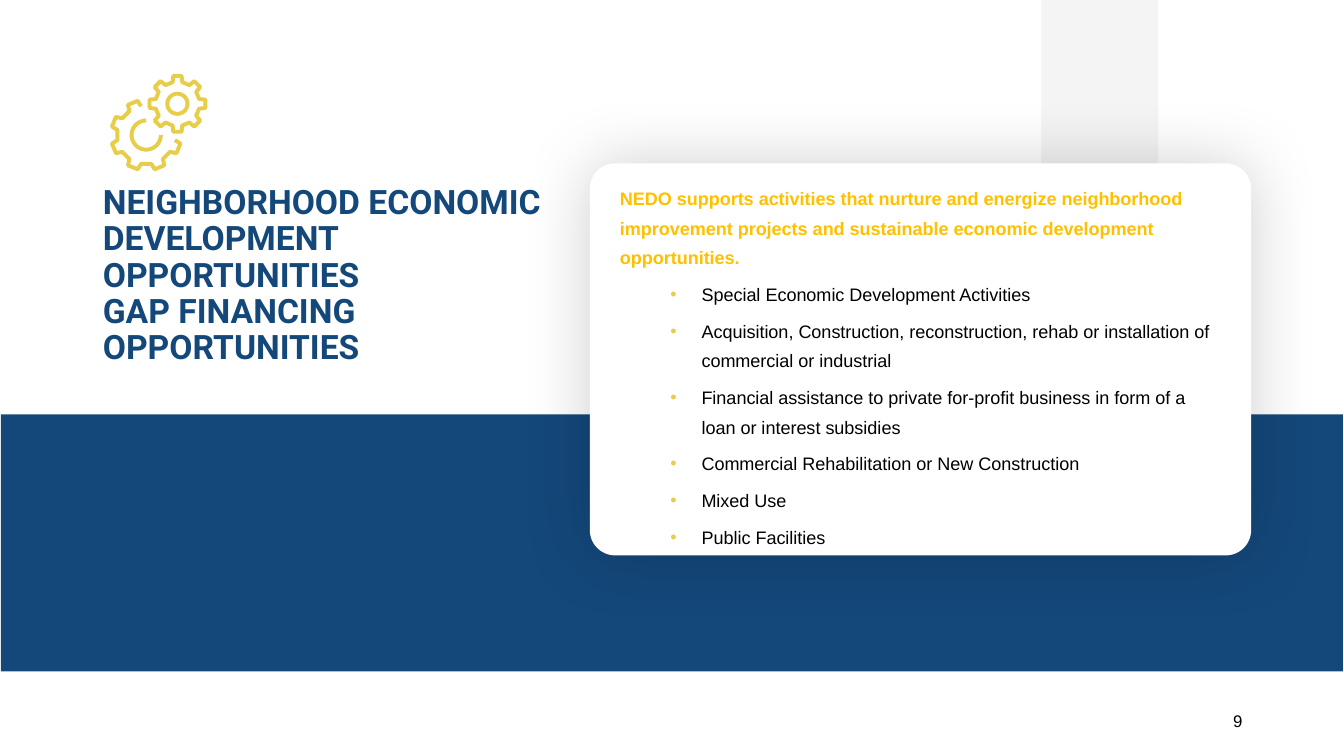
from dataclasses import dataclass
from math import cos, radians, sin

from lxml import etree
from pptx import Presentation
from pptx.dml.color import RGBColor
from pptx.enum.shapes import MSO_SHAPE
from pptx.enum.text import MSO_ANCHOR, PP_ALIGN
from pptx.oxml.ns import qn
from pptx.util import Inches, Pt

COLORS = {
    "navy": "14487A",
    "gold": "E8CD48",
    "amber": "FFC000",
    "black": "000000",
    "white": "FFFFFF",
    "gray": "F2F2F2",
}

TITLE = "NEIGHBORHOOD ECONOMIC DEVELOPMENT OPPORTUNITIES\vGAP FINANCING OPPORTUNITIES"
MISSION = (
    "NEDO supports activities that nurture and energize neighborhood improvement "
    "projects and sustainable economic development opportunities."
)
ACTIVITIES = [
    "Special Economic Development Activities",
    "Acquisition, Construction, reconstruction, rehab or installation of commercial or industrial",
    "Financial assistance to private for-profit business in form of a loan or interest subsidies",
    "Commercial Rehabilitation or New Construction",
    "Mixed Use",
    "Public Facilities",
]


@dataclass(frozen=True)
class Box:
    left: float
    top: float
    width: float
    height: float

    def lengths(self) -> list:
        return [Inches(n) for n in (self.left, self.top, self.width, self.height)]


@dataclass(frozen=True)
class Panel:
    box: Box
    color: str
    preset: MSO_SHAPE = MSO_SHAPE.RECTANGLE


@dataclass(frozen=True)
class Gear:
    """Teeth stand every 45 degrees; an open gear leaves out its last teeth."""
    x: float
    y: float
    tip: float
    root: float
    hub: float
    first_tooth: float
    teeth: int
    hub_sweep: int


STRIPE = Panel(Box(10.33, 0, 1.16, 2.02), "gray")
BAND = Panel(Box(0.01, 4.11, 13.31, 2.55), "navy")
CARD = Panel(Box(5.85, 1.62, 6.56, 3.89), "white", MSO_SHAPE.ROUNDED_RECTANGLE)
GEARS = [
    Gear(1.76, 1.03, 0.28, 0.22, 0.1, 0, 8, 360),
    Gear(1.45, 1.34, 0.35, 0.29, 0.145, 22.5, 6, 270),
]


def rgb(name: str) -> RGBColor:
    return RGBColor.from_string(COLORS[name])


def draw_panel(slide, panel: Panel):
    shape = slide.shapes.add_shape(panel.preset, *panel.box.lengths())
    shape.shadow.inherit = False
    shape.fill.solid()
    shape.fill.fore_color.rgb = rgb(panel.color)
    shape.line.fill.background()
    return shape


def add_alpha(color_element, percent: int) -> None:
    etree.SubElement(color_element, qn("a:alpha"), val=str(percent * 1000))


def add_glow_shadow(shape, blur: int, percent: int) -> None:
    effects = shape.element.spPr.find(qn("a:effectLst"))
    shadow = etree.SubElement(
        effects, qn("a:outerShdw"), blurRad=str(Pt(blur)), dist="0", dir="0",
        algn="ctr", rotWithShape="0",
    )
    add_alpha(etree.SubElement(shadow, qn("a:srgbClr"), val=COLORS["black"]), percent)


def trace(slide, gear: Gear, polar: list[tuple[float, float]], close: bool) -> None:
    """Stroke a line through (radius, degrees) points around the gear's centre."""
    points = [
        (Inches(gear.x + r * cos(radians(a))), Inches(gear.y + r * sin(radians(a))))
        for r, a in polar
    ]
    builder = slide.shapes.build_freeform(*points[0])
    builder.add_line_segments(points[1:], close=close)
    outline = builder.convert_to_shape()
    outline.shadow.inherit = False
    outline.fill.background()
    outline.line.color.rgb = rgb("gold")
    outline.line.width = Pt(2.8)
    etree.SubElement(outline.line._get_or_add_ln(), qn("a:round"))


def draw_gear(slide, gear: Gear) -> None:
    tooth = [(gear.root, -12.5), (gear.tip, -8.5), (gear.tip, 8.5), (gear.root, 12.5)]
    rim = [
        (radius, gear.first_tooth + 45 * i + offset)
        for i in range(gear.teeth)
        for radius, offset in tooth
    ]
    trace(slide, gear, rim, close=gear.teeth == 8)
    hub = [(gear.hub, -a) for a in range(0, gear.hub_sweep + 1, 10)]
    if gear.hub_sweep < 360:
        hub = [(radius, -90 + angle) for radius, angle in hub]
    trace(slide, gear, hub, close=gear.hub_sweep == 360)


def style(paragraph, font: str, size: float, color: str, bold: bool = False) -> None:
    paragraph.font.name = font
    paragraph.font.size = Pt(size)
    paragraph.font.bold = bold
    paragraph.font.color.rgb = rgb(color)


def add_text_frame(slide, box: Box, anchor: MSO_ANCHOR):
    frame = slide.shapes.add_textbox(*box.lengths()).text_frame
    frame.word_wrap = True
    frame.vertical_anchor = anchor
    return frame


def add_bullet(paragraph) -> None:
    properties = paragraph._p.get_or_add_pPr()
    properties.set("marL", str(Inches(0.81)))
    properties.set("indent", str(Inches(-0.31)))
    bullet_color = etree.SubElement(properties, qn("a:buClr"))
    etree.SubElement(bullet_color, qn("a:srgbClr"), val=COLORS["gold"])
    etree.SubElement(properties, qn("a:buFont"), typeface="Arial")
    etree.SubElement(properties, qn("a:buChar"), char="•")


def write_title(slide) -> None:
    title = slide.shapes.title
    title.left, title.top, title.width, title.height = Box(0.92, 1.8, 4.94, 1.88).lengths()
    frame = title.text_frame
    frame.text = TITLE
    frame.word_wrap = True
    frame.vertical_anchor = MSO_ANCHOR.MIDDLE
    heading = frame.paragraphs[0]
    heading.alignment = PP_ALIGN.LEFT
    heading.line_spacing = 0.9
    style(heading, "Roboto", 24, "navy", bold=True)


def write_activities(slide) -> None:
    frame = add_text_frame(slide, Box(6.05, 1.73, 6.17, 3.84), MSO_ANCHOR.TOP)
    mission = frame.paragraphs[0]
    mission.text = MISSION
    mission.line_spacing = 1.37
    style(mission, "Arial", 12.9, "amber", bold=True)
    for text in ACTIVITIES:
        activity = frame.add_paragraph()
        activity.text = text
        activity.level = 1
        add_bullet(activity)
        activity.line_spacing = 1.37
        activity.space_before = Pt(5)
        style(activity, "Arial", 12.9, "black")


def write_page_number(slide) -> None:
    number = add_text_frame(slide, Box(9.42, 6.95, 3, 0.4), MSO_ANCHOR.MIDDLE).paragraphs[0]
    number.text = "9"
    number.alignment = PP_ALIGN.RIGHT
    style(number, "Arial", 12, "black")


def main() -> None:
    deck = Presentation()
    deck.slide_width, deck.slide_height = Inches(13.33), Inches(7.5)
    slide = deck.slides.add_slide(deck.slide_layouts[5])
    stripe = draw_panel(slide, STRIPE)
    add_alpha(stripe.element.spPr.find(qn("a:solidFill"))[0], 80)
    draw_panel(slide, BAND)
    card = draw_panel(slide, CARD)
    card.adjustments[0] = 0.065
    add_glow_shadow(card, blur=50, percent=19)
    write_title(slide)
    write_page_number(slide)
    write_activities(slide)
    for gear in GEARS:
        draw_gear(slide, gear)
    deck.save("out.pptx")


if __name__ == "__main__":
    main()
